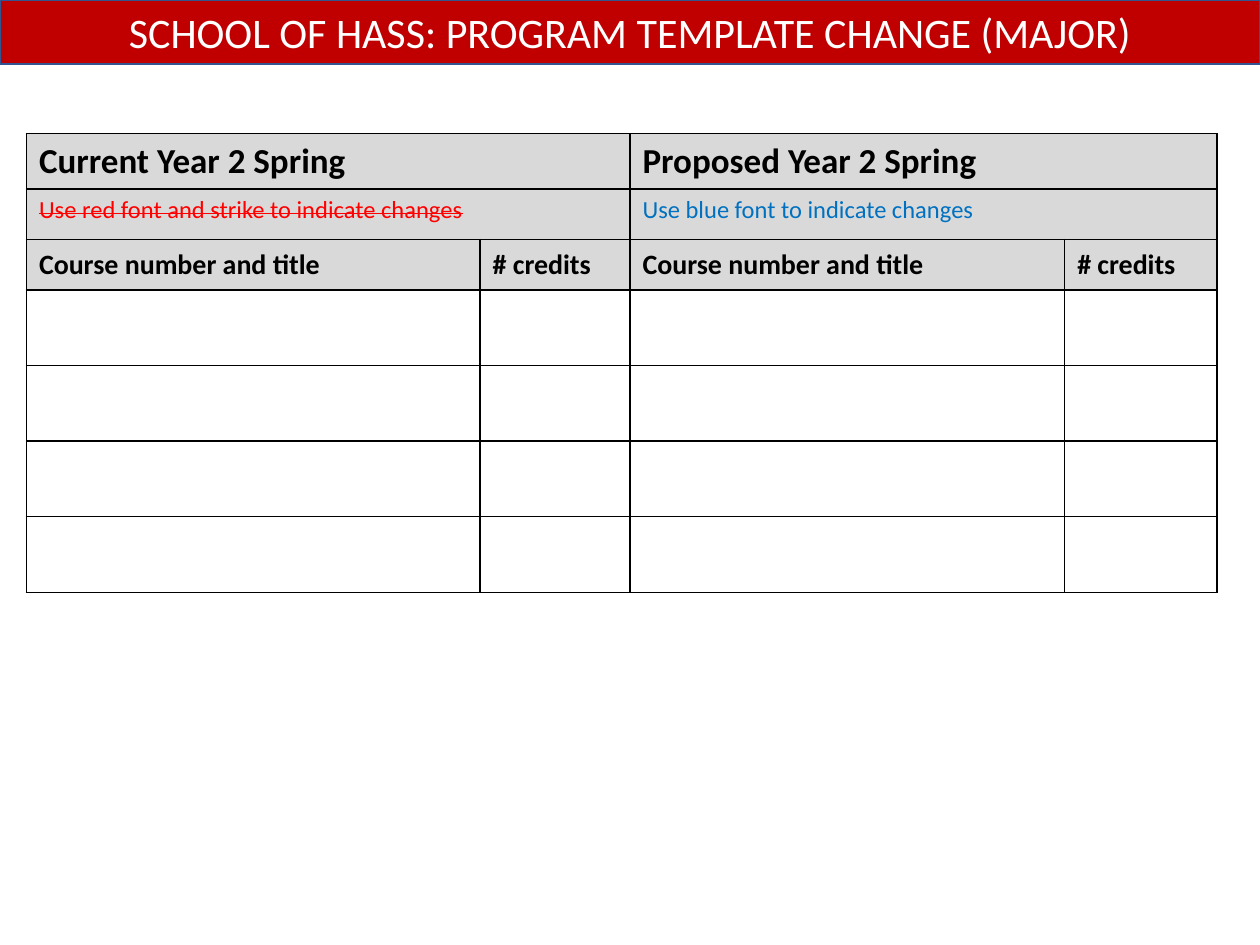
from lxml.etree import SubElement as Sub
from pptx import Presentation
from pptx.dml.color import RGBColor as RGB
from pptx.enum.shapes import MSO_SHAPE as Shape
from pptx.enum.text import MSO_ANCHOR as Anchor, PP_ALIGN as Align
from pptx.oxml.ns import qn
from pptx.util import Inches, Pt

COLORS = {
    "band": "C00000", "edge": "325491", "head": "D9D9D9", "white": "FFFFFF",
    "black": "000000", "red": "FF0000", "blue": "0070C0",
}
WIDE, HIGH = 10, 7.5
COLS = [3.6, 1.19, 3.45, 1.21]
ROWS = [0.43, 0.4, 0.4] + [0.6] * 4
HEADS = 3


def rgb(name):
    return RGB.from_string(COLORS[name])


def write(frame, text, size=16, color="black", bold=False, strike=False,
          align=Align.LEFT):
    para = frame.paragraphs[0]
    para.alignment = align
    run = para.add_run()
    run.text = text
    font = run.font
    font.name, font.size, font.bold = "Calibri", Pt(size), bold
    font.color.rgb = rgb(color)
    if strike:
        run._r.get_or_add_rPr().set("strike", "sngStrike")


def border(cell, color="black", width=1):
    props = cell._tc.get_or_add_tcPr()
    for side in ("lnL", "lnR", "lnT", "lnB"):
        line = Sub(props, qn("a:" + side), w=str(Pt(width)))
        fill = Sub(line, qn("a:solidFill"))
        Sub(fill, qn("a:srgbClr"), val=COLORS[color])


def banner(slide, left, top, width, height):
    bar = slide.shapes.add_shape(
        Shape.RECTANGLE, *map(Inches, (left, top, width, height)))
    bar.shadow.inherit = False
    bar.fill.solid()
    bar.fill.fore_color.rgb = rgb("band")
    bar.line.color.rgb = rgb("edge")
    bar.line.width = Pt(1)
    bar.text_frame.vertical_anchor = Anchor.MIDDLE
    write(bar.text_frame, "SCHOOL OF HASS: PROGRAM TEMPLATE CHANGE (MAJOR)",
          size=24, color="white", align=Align.CENTER)


def courses(slide, left, top, width, height):
    table = slide.shapes.add_table(
        len(ROWS), len(COLS), *map(Inches, (left, top, width, height))).table
    table.first_row = table.horz_banding = False
    for col, size in zip(table.columns, COLS):
        col.width = Inches(size)
    for row, size in zip(table.rows, ROWS):
        row.height = Inches(size)

    # Grid lines and fills
    for r in range(len(ROWS)):
        for c in range(len(COLS)):
            cell = table.cell(r, c)
            border(cell)
            if r < HEADS:
                cell.fill.solid()
                cell.fill.fore_color.rgb = rgb("head")
            else:
                cell.fill.background()

    # Headings of the current and proposed halves
    halves = [
        ("Current Year 2 Spring", "Use red font and strike to indicate changes",
         {"color": "red", "strike": True}),
        ("Proposed Year 2 Spring", "Use blue font to indicate changes",
         {"color": "blue"}),
    ]
    for half, (title, hint, style) in enumerate(halves):
        c = 2 * half
        for r in (0, 1):
            table.cell(r, c).merge(table.cell(r, c + 1))
        write(table.cell(0, c).text_frame, title, size=20, bold=True)
        write(table.cell(1, c).text_frame, hint, size=14, **style)
        for i, label in enumerate(("Course number and title", "# credits")):
            cell = table.cell(2, c + i)
            cell.vertical_anchor = Anchor.MIDDLE
            write(cell.text_frame, label, bold=True)


def main():
    deck = Presentation()
    deck.slide_width, deck.slide_height = Inches(WIDE), Inches(HIGH)
    slide = deck.slides.add_slide(deck.slide_layouts[6])
    courses(slide, 0.21, 1.06, sum(COLS), sum(ROWS))
    banner(slide, 0, 0, WIDE, 0.51)
    deck.save("out.pptx")


if __name__ == "__main__":
    main()
